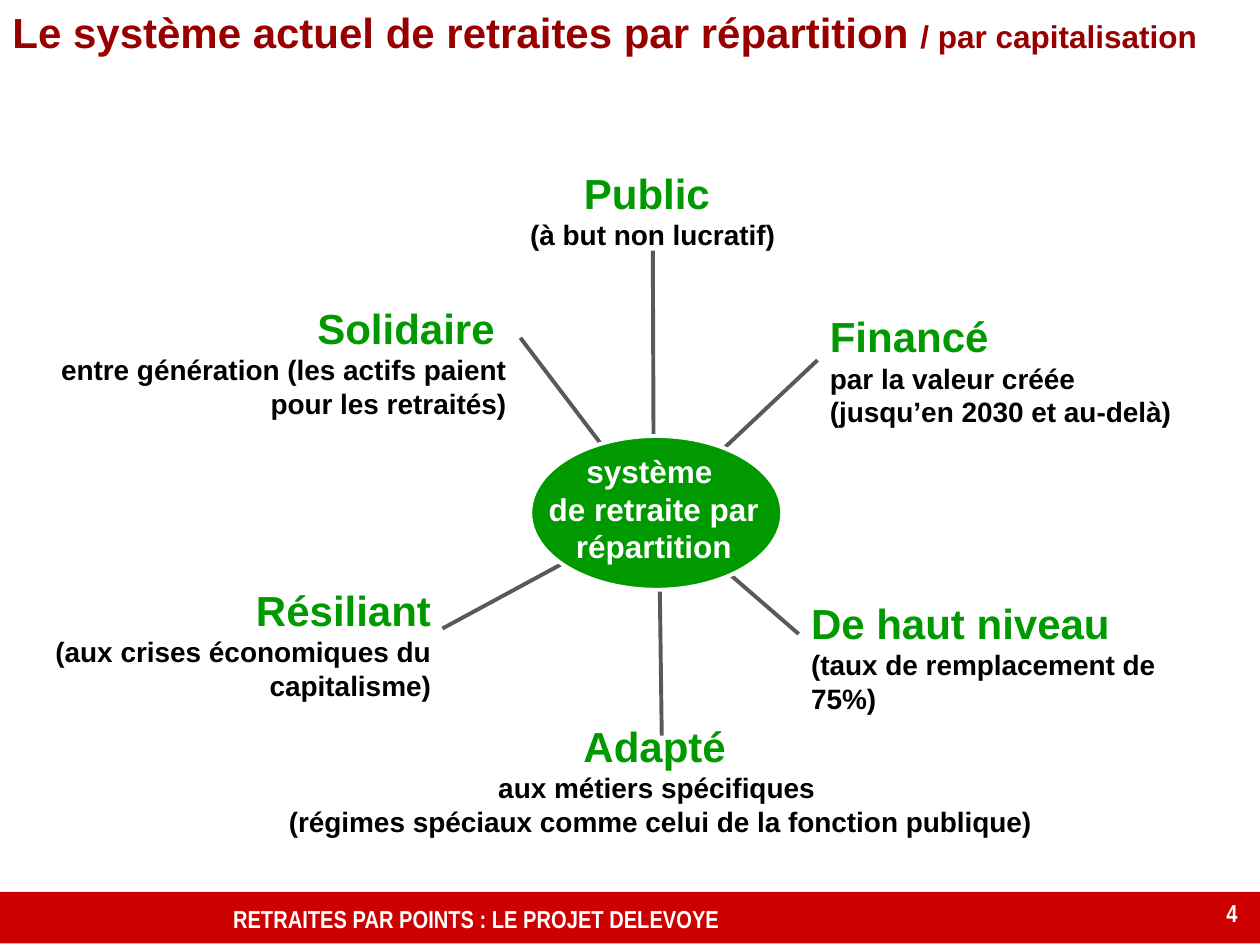
from dataclasses import dataclass

import pptx
import pptx.dml.color
import pptx.enum.shapes
import pptx.enum.text
import pptx.oxml.ns
import pptx.util
from lxml import etree

Cm, Pt = pptx.util.Cm, pptx.util.Pt
LEFT, CENTER, RIGHT = (pptx.enum.text.PP_ALIGN.LEFT, pptx.enum.text.PP_ALIGN.CENTER,
                       pptx.enum.text.PP_ALIGN.RIGHT)
GREEN, RED, DARK_RED = "009900", "CC0000", "980000"
GREY, BLACK, WHITE = "595959", "000000", "FFFFFF"
Box = tuple[float, float, float, float]
Point = tuple[float, float]


@dataclass
class Line:
    text: str
    size: float
    color: str
    font: str = "Arial"


@dataclass
class Branch:
    """One quality of the pension system, tied to the hub by a spoke."""
    heading: str
    details: list[str]
    box: Box
    align: int
    spoke_start: Point
    spoke_end: Point
    inset: float = 0.25


BRANCHES = [
    Branch("Solidaire ", ["entre génération (les actifs paient pour les retraités)"],
           (-0.03, 5.84, 10.49, 1.93), RIGHT, (13.11, 10.26), (10.49, 6.81)),
    Branch("Résiliant", ["(aux crises économiques du capitalisme)"],
           (0.84, 11.53, 8.1, 2.31), RIGHT, (13.23, 10.34), (8.92, 12.67)),
    Branch("Public ", ["(à but non lucratif)"],
           (10.67, 3.38, 4.98, 1.68), CENTER, (13.16, 5.05), (13.18, 10.36), inset=0),
    Branch("Financé", ["par la valeur créée", "(jusqu’en 2030 et au-delà)"],
           (16.48, 6.02, 8.1, 2.49), LEFT, (13.21, 10.34), (16.48, 7.26)),
    Branch("Adapté ", ["aux métiers spécifiques ",
                       "(régimes spéciaux comme celui de la fonction publique)"],
           (5.44, 14.27, 15.75, 1.83), CENTER, (13.28, 10.29), (13.34, 14.83)),
    Branch("De haut niveau", ["(taux de remplacement de 75%)"],
           (16.1, 11.79, 8.89, 1.93), LEFT, (13.34, 10.39), (16.1, 12.78)),
]


def rgb(color: str):
    return pptx.dml.color.RGBColor.from_string(color)


def set_font(font, size: float, color: str, name: str = "Arial") -> None:
    font.name, font.size, font.bold = name, Pt(size), True
    font.color.rgb = rgb(color)


def set_frame(frame, inset_x: float, inset_y: float) -> None:
    frame.word_wrap = True
    frame.auto_size = pptx.enum.text.MSO_AUTO_SIZE.NONE
    frame.vertical_anchor = pptx.enum.text.MSO_ANCHOR.TOP
    frame.margin_left = frame.margin_right = Cm(inset_x)
    frame.margin_top = frame.margin_bottom = Cm(inset_y)


def add_text(slide, box: Box, lines: list[Line], align: int,
             inset_x: float = 0.25, inset_y: float = 0.25) -> None:
    frame = slide.shapes.add_textbox(*map(Cm, box)).text_frame
    set_frame(frame, inset_x, inset_y)
    for index, line in enumerate(lines):
        paragraph = frame.add_paragraph() if index else frame.paragraphs[0]
        paragraph.text, paragraph.alignment = line.text, align
        set_font(paragraph.font, line.size, line.color, line.font)


def add_plain_shape(slide, kind, box: Box, fill: str):
    shape = slide.shapes.add_shape(kind, *map(Cm, box))
    shape.shadow.inherit = False
    shape.fill.solid()
    shape.fill.fore_color.rgb = rgb(fill)
    shape.line.fill.background()
    return shape


def add_spoke(slide, start: Point, end: Point) -> None:
    spoke = slide.shapes.add_connector(
        pptx.enum.shapes.MSO_CONNECTOR.STRAIGHT, *map(Cm, start + end))
    spoke.line.color.rgb = rgb(GREY)
    spoke.line.width = Pt(2.25)
    etree.SubElement(spoke._element.spPr, pptx.oxml.ns.qn("a:effectLst"))


def add_title(slide) -> None:
    title = slide.shapes.title
    title.left, title.top, title.width, title.height = map(Cm, (0, 0, 26.37, 1.27))
    set_frame(title.text_frame, 0.25, 0.13)
    paragraph = title.text_frame.paragraphs[0]
    paragraph.alignment = LEFT
    for text, size in (("Le système actuel de retraites par répartition ", 24),
                       ("/ par capitalisation", 18)):
        run = paragraph.add_run()
        run.text = text
        set_font(run.font, size, DARK_RED)


def add_footer(slide) -> None:
    add_plain_shape(slide, pptx.enum.shapes.MSO_SHAPE.RECTANGLE, (0, 17.98, 25.4, 1.04), RED)
    add_text(slide, (4.45, 17.98, 12.78, 0.84),
             [Line("RETRAITES PAR POINTS : LE PROJET DELEVOYE", 14, WHITE, "Arial Narrow")], LEFT)
    add_text(slide, (24.26, 17.98, 0.94, 1.27),
             [Line("4", 14, WHITE, "Arial Narrow")], RIGHT, inset_y=0.13)


def add_hub(slide) -> None:
    hub = add_plain_shape(slide, pptx.enum.shapes.MSO_SHAPE.OVAL, (10.69, 8.79, 5.08, 3.1), GREEN)
    hub.line.color.rgb = rgb(WHITE)
    hub.line.width = Pt(2.25)
    add_text(slide, (10.69, 8.86, 4.98, 2.64),
             [Line("système ", 18, WHITE), Line("de retraite par répartition", 18, WHITE)], CENTER)


def main() -> None:
    deck = pptx.Presentation()
    deck.slide_width, deck.slide_height = Cm(25.4), Cm(19.05)
    slide = deck.slides.add_slide(deck.slide_layouts[5])
    add_title(slide)
    add_footer(slide)
    for branch in BRANCHES:
        add_spoke(slide, branch.spoke_start, branch.spoke_end)
        lines = [Line(branch.heading, 24, GREEN)]
        lines += [Line(detail, 16, BLACK) for detail in branch.details]
        add_text(slide, branch.box, lines, branch.align, branch.inset, branch.inset)
    add_hub(slide)
    deck.save("out.pptx")


if __name__ == "__main__":
    main()
